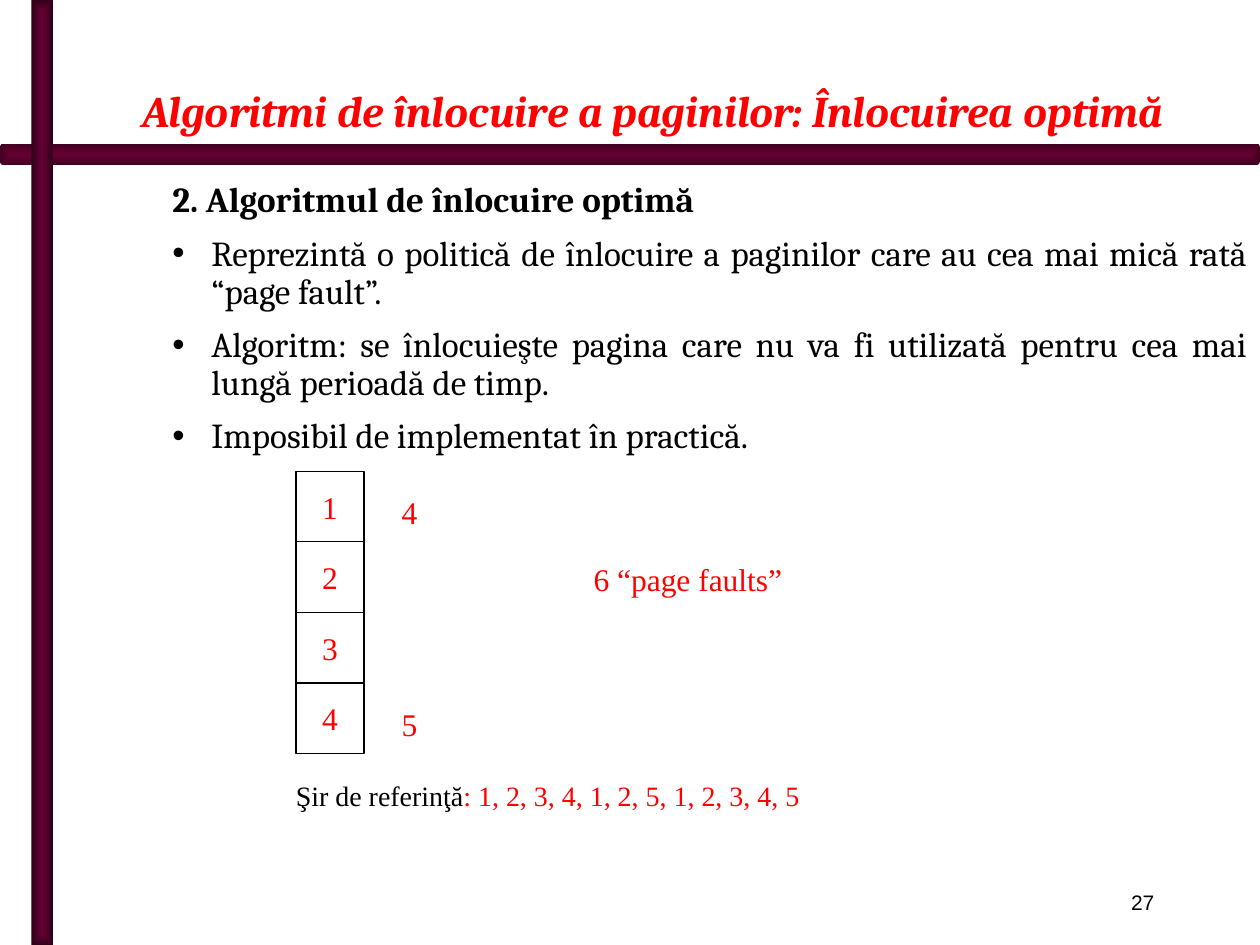
from dataclasses import dataclass

import lxml.etree
import pptx
import pptx.dml.color
import pptx.enum.shapes
import pptx.enum.text
import pptx.oxml.ns
import pptx.util

ALIGN = pptx.enum.text.PP_ALIGN
ANCHOR = pptx.enum.text.MSO_ANCHOR
SHAPE = pptx.enum.shapes.MSO_SHAPE
COLS, ROWS = 100, 75


def rgb(code):
    return pptx.dml.color.RGBColor.from_string(code)


def node(parent, tag, **attrs):
    return lxml.etree.SubElement(parent, pptx.oxml.ns.qn(tag), attrs)


@dataclass(frozen=True)
class Theme:
    ink: str = "000000"
    red: str = "FF0000"
    paper: str = "FFFFFF"
    plum: str = "660033"
    shade: str = "410020"
    dusk: str = "2F0018"
    serif: str = "Cambria"
    roman: str = "Times New Roman"
    sans: str = "Arial"
    title: int = 25
    body: int = 20
    label: int = 18
    note: int = 16
    small: int = 12


class Deck:
    def __init__(self, theme):
        self.theme = theme
        self.file = pptx.Presentation()
        self.file.slide_width = pptx.util.Inches(10)
        self.file.slide_height = pptx.util.Inches(7.5)
        self.slide = self.file.slides.add_slide(self.file.slide_layouts[6])

    def area(self, col, row, wide, high):
        """Turn grid columns and rows into slide lengths."""
        x = self.file.slide_width / COLS
        y = self.file.slide_height / ROWS
        return [round(v) for v in (col * x, row * y, wide * x, high * y)]

    def shape(self, kind, place):
        item = self.slide.shapes.add_shape(kind, *self.area(*place))
        item.shadow.inherit = False
        return item

    def bar(self, kind, place, edge):
        """Draw a bar whose colour darkens from the centre to the edge."""
        item = self.shape(kind, place)
        item.line.fill.background()
        item.fill.gradient()
        for stop, code in zip(item.fill.gradient_stops, (self.theme.plum, edge)):
            stop.color.rgb = rgb(code)
        grad = item._element.spPr.find(pptx.oxml.ns.qn("a:gradFill"))
        grad.remove(grad.find(pptx.oxml.ns.qn("a:lin")))
        focus = node(grad, "a:path", path="shape")
        node(focus, "a:fillToRect", l="50000", t="50000", r="50000", b="50000")

    def run(self, para, text, size, face, color, bold=False, slant=False):
        part = para.add_run()
        part.text = text
        font = part.font
        font.size, font.name = pptx.util.Pt(size), face
        font.bold, font.italic = bold, slant
        font.color.rgb = rgb(color)

    def frame(self, item, anchor):
        box = item.text_frame
        box.word_wrap = True
        box.vertical_anchor = anchor
        return box

    def text(self, place, runs, align=ALIGN.LEFT, anchor=ANCHOR.TOP):
        item = self.slide.shapes.add_textbox(*self.area(*place))
        para = self.frame(item, anchor).paragraphs[0]
        para.alignment = align
        for run in runs:
            self.run(para, *run)

    def label(self, place, text):
        look = self.theme
        self.text(place, [(text, look.label, look.roman, look.red)],
                  ALIGN.CENTER, ANCHOR.MIDDLE)

    def cell(self, place, text):
        look = self.theme
        item = self.shape(SHAPE.RECTANGLE, place)
        item.fill.solid()
        item.fill.fore_color.rgb = rgb(look.paper)
        item.line.color.rgb = rgb(look.ink)
        item.line.width = pptx.util.Pt(0.75)
        para = self.frame(item, ANCHOR.MIDDLE).paragraphs[0]
        para.alignment = ALIGN.CENTER
        self.run(para, text, look.label, look.roman, look.red)

    def points(self, place, head, lines):
        """Write a bold heading with a bulleted list below it."""
        look = self.theme
        item = self.slide.shapes.add_textbox(*self.area(*place))
        box = self.frame(item, ANCHOR.TOP)
        for i, line in enumerate([head] + lines):
            para = box.add_paragraph() if i else box.paragraphs[0]
            props = para._p.get_or_add_pPr()
            props.set("marL", str(pptx.util.Inches(0.81 if i else 0.5)))
            if i:
                props.set("indent", str(pptx.util.Inches(-0.31)))
                node(node(props, "a:buClr"), "a:srgbClr", val=look.ink)
                node(props, "a:buFont", typeface=look.sans)
                node(props, "a:buChar", char="•")
                para.space_before = pptx.util.Pt(4)
            para.alignment = ALIGN.JUSTIFY
            para.line_spacing = 0.9
            para.space_after = pptx.util.Pt(5)
            self.run(para, line, look.body, look.serif, look.ink, bold=not i)


def main():
    look = Theme()
    deck = Deck(look)
    deck.bar(SHAPE.ROUNDED_RECTANGLE, (0, 11.4, 100, 1.7), look.shade)
    deck.bar(SHAPE.RECTANGLE, (2.5, 0, 1.7, 75), look.dusk)
    deck.text((7.5, 70.1, 85.1, 3), [("27", look.small, look.sans, look.ink)],
              ALIGN.RIGHT)
    deck.text((8.3, 1.7, 85, 9.6),
              [("Algoritmi de înlocuire a paginilor: Înlocuirea optimă",
                look.title, look.serif, look.red, True, True)],
              ALIGN.RIGHT, ANCHOR.BOTTOM)
    deck.points((7.7, 14, 92.3, 21.7), "2. Algoritmul de înlocuire optimă", [
        "Reprezintă o politică de înlocuire a paginilor care au cea mai mică "
        "rată “page fault”.",
        "Algoritm: se înlocuieşte pagina care nu va fi utilizată pentru cea "
        "mai lungă perioadă de timp.",
        "Imposibil de implementat în practică.",
    ])

    left, top, wide, high = 23.5, 37.4, 5.4, 5.6
    swaps = {0: "4", 3: "5"}
    for i in range(4):
        row = top + i * high
        deck.cell((left, row, wide, high), str(i + 1))
        if i in swaps:
            deck.label((30.3, row + 1, 4.4, 4.5), swaps[i])
    deck.label((43.2, 43.7, 22.8, 4.5), "6 “page faults”")
    deck.text((22.5, 61.3, 55.1, 3.9), [
        ("Şir de referinţă", look.note, look.roman, look.ink),
        (": 1, 2, 3, 4, 1, 2, 5, 1, 2, 3, 4, 5", look.note, look.roman, look.red),
    ])
    deck.file.save("out.pptx")


if __name__ == "__main__":
    main()
